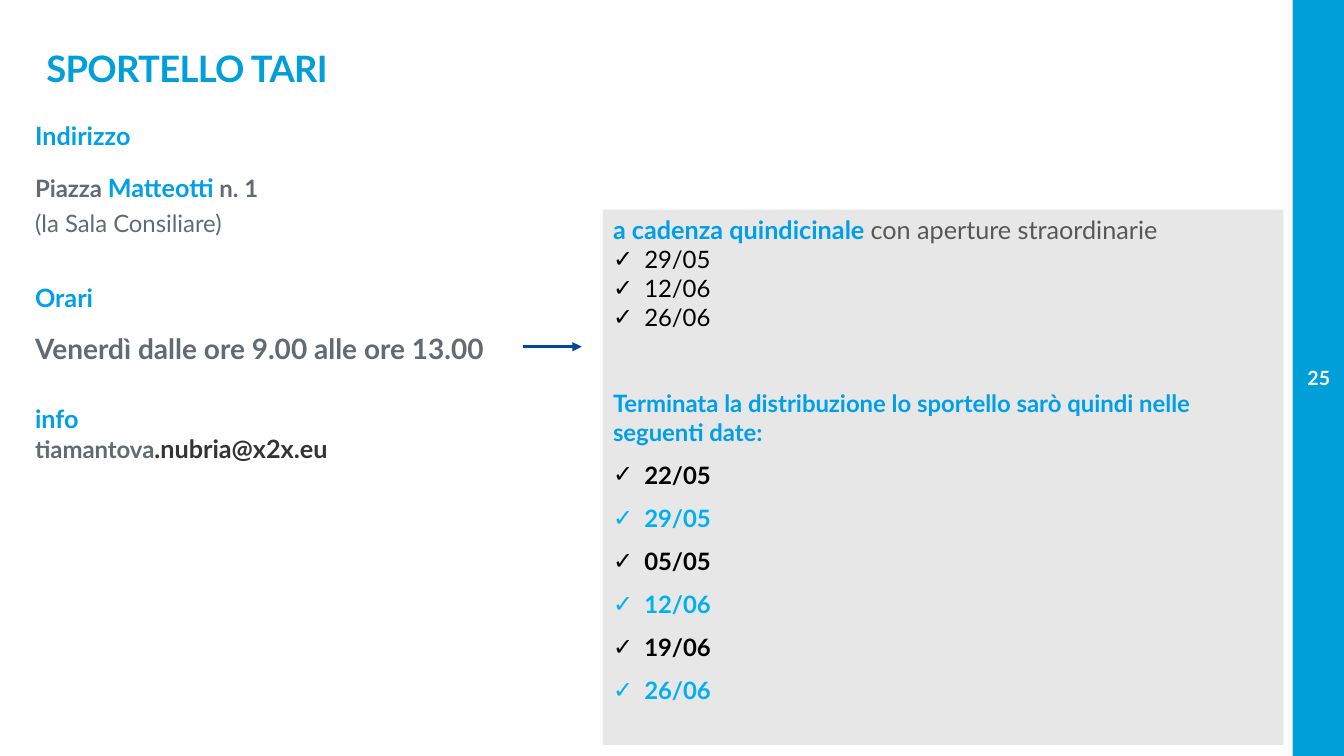
from lxml.etree import SubElement
from pptx import Presentation
from pptx.dml.color import RGBColor
from pptx.enum.shapes import MSO_CONNECTOR as CONN, MSO_SHAPE as SHAPE
from pptx.enum.text import MSO_ANCHOR as ANCHOR, MSO_AUTO_SIZE as AUTO, PP_ALIGN as ALIGN
from pptx.oxml.ns import qn
from pptx.util import Inches, Pt

FONT = "Lato"
BAR, HEAD, GREY, BODY = "009FDA", "009FE7", "636B71", "585757"
BLACK, SKY, DARK, WHITE, PANEL, NAVY = "000000", "00B0F0", "333333", "FFFFFF", "E7E7E7", "004899"
SMALL, MEDIUM, LARGE = 17.1, 18, 20


def rgb(value):
    return RGBColor.from_string(value)


def set_all(obj, values):
    for name, value in values.items():
        setattr(obj, name, value)


def place(sp, box):
    sp.left, sp.top, sp.width, sp.height = map(Inches, box)


def add_block(slide, box, fill):
    sp = slide.shapes.add_shape(SHAPE.RECTANGLE, *map(Inches, box))
    sp.shadow.inherit = False
    sp.fill.solid()
    sp.fill.fore_color.rgb = rgb(fill)
    sp.line.fill.background()
    return sp


def set_bullet(p, char=None):
    pPr = p._p.get_or_add_pPr()
    hang = Inches(0.31) if char else 0
    pPr.set("marL", str(hang))
    pPr.set("indent", str(-hang))
    if char:
        SubElement(pPr, qn("a:buChar")).set("char", char)
    else:
        SubElement(pPr, qn("a:buNone"))


def add_runs(p, runs):
    for text, size, color, bold in runs:
        if text == "\n":
            p.add_line_break()
            continue
        r = p.add_run()
        r.text = text
        set_all(r.font, {"name": FONT, "size": Pt(size), "bold": bold})
        r.font.color.rgb = rgb(color)


def write(sp, paragraphs, anchor=ANCHOR.TOP, **frame):
    """Fill a shape with paragraphs given as (runs, format, bullet)."""
    tf = sp.text_frame
    set_all(tf, {"word_wrap": True, "auto_size": AUTO.NONE, "vertical_anchor": anchor, **frame})
    for i, (runs, fmt, bullet) in enumerate(paragraphs):
        p = tf.add_paragraph() if i else tf.paragraphs[0]
        set_bullet(p, bullet)
        set_all(p, {"alignment": ALIGN.LEFT, "space_before": Pt(0), "space_after": Pt(0), **fmt})
        add_runs(p, runs)


def add_arrow(slide, start, end):
    line = slide.shapes.add_connector(CONN.STRAIGHT, *map(Inches, start + end))
    line.line.color.rgb = rgb(NAVY)
    line.line.width = Pt(2.25)
    SubElement(line.line._get_or_add_ln(), qn("a:tailEnd")).set("type", "triangle")
    SubElement(line._element.spPr, qn("a:effectLst"))


def add_title(slide, text):
    title = slide.shapes.title
    place(title, (0.46, 0.45, 12.13, 0.5))
    write(title, [([(text, 26, BAR, True)], {"line_spacing": 0.9}, None)],
          ANCHOR.BOTTOM, margin_left=0)
    title.text_frame.paragraphs[0].runs[0].font._element.set("spc", "-50")


def add_side_bar(slide, number):
    add_block(slide, (12.82, 0, 0.52, 7.5), BAR)
    sp = slide.shapes.add_textbox(*map(Inches, (12.82, 3.55, 0.52, 0.4)))
    margins = {f"margin_{side}": 0 for side in ("left", "top", "right", "bottom")}
    write(sp, [([(number, 14, WHITE, True)], {"alignment": ALIGN.CENTER}, None)],
          ANCHOR.MIDDLE, **margins)


def add_contacts(slide):
    heading = {"line_spacing": Pt(28.8), "space_after": Pt(12)}
    line = {"line_spacing": Pt(25.2)}
    address = [("Piazza ", SMALL, GREY, True), ("Matteotti", MEDIUM, HEAD, True),
               (" n. 1", SMALL, GREY, True), ("\n", SMALL, GREY, False),
               ("(la Sala Consiliare)", SMALL, GREY, False)]
    write(add_block(slide, (0.25, 1.04, 5.15, 2.63), WHITE), [
        ([("Indirizzo", MEDIUM, HEAD, True)], heading, None),
        (address, line, None),
        ([("Orari", MEDIUM, HEAD, True)], {**heading, "space_before": Pt(25.2)}, None),
        ([("Venerdì dalle ore 9.00 alle ore 13.00", LARGE, GREY, True)], line, None)])
    write(add_block(slide, (0.25, 3.95, 6.67, 0.71), WHITE), [
        ([("info", MEDIUM, HEAD, True)], {}, None),
        ([("tiamantova", SMALL, GREY, True), (".nubria@x2x.eu", MEDIUM, DARK, True)], {}, None)])


def add_dates(slide):
    panel = slide.placeholders[1]
    slide.shapes._spTree.append(panel._element)
    place(panel, (5.98, 2.08, 6.75, 5.31))
    panel.fill.solid()
    panel.fill.fore_color.rgb = rgb(PANEL)
    extra = ["29/05", "12/06", "26/06"]
    regular = ["22/05", "29/05", "05/05", "12/06", "19/06", "26/06"]
    intro = [("a cadenza quindicinale ", MEDIUM, HEAD, True),
             ("con aperture straordinarie", MEDIUM, BODY, False)]
    notice = "Terminata la distribuzione lo sportello sarò quindi nelle seguenti date:"
    paragraphs = [(intro, {}, None)]
    paragraphs += [([(day, SMALL, BLACK, False)], {}, "✓") for day in extra]
    paragraphs.append(([(notice, SMALL, HEAD, True)], {"space_before": Pt(41)}, None))
    paragraphs += [([(day, SMALL, SKY if day in extra else BLACK, True)],
                    {"line_spacing": 1.5}, "✓") for day in regular]
    write(panel, paragraphs)


def main():
    prs = Presentation()
    prs.slide_width, prs.slide_height = Inches(13.33), Inches(7.5)
    slide = prs.slides.add_slide(prs.slide_layouts[1])
    add_side_bar(slide, "25")
    add_title(slide, "SPORTELLO TARI")
    add_contacts(slide)
    add_arrow(slide, (5.19, 3.44), (5.77, 3.44))
    add_dates(slide)
    prs.save("out.pptx")


if __name__ == "__main__":
    main()
